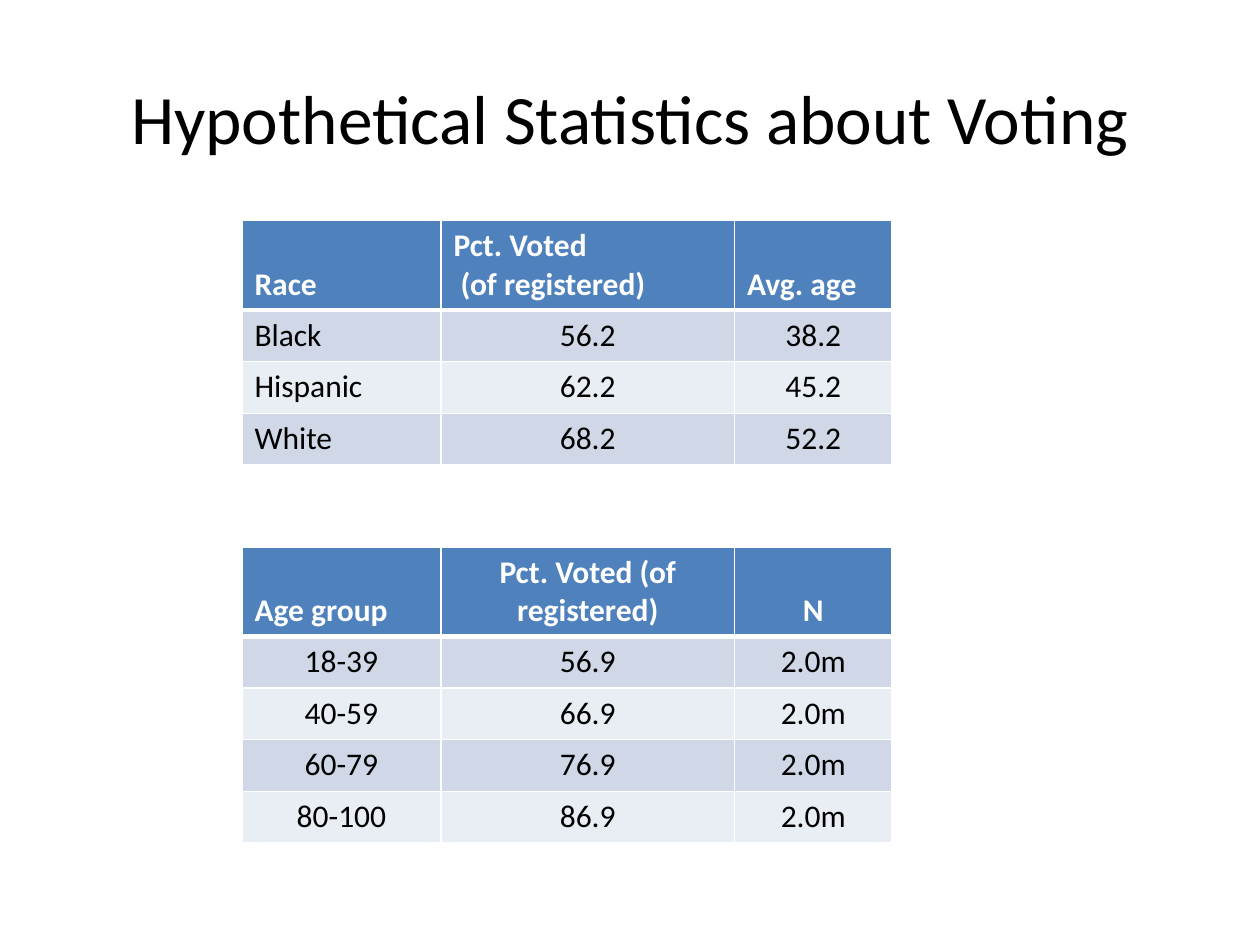
from dataclasses import dataclass

from lxml import etree
from pptx import Presentation
from pptx import util as u
from pptx.dml.color import RGBColor
from pptx.enum import text
from pptx.oxml import ns


@dataclass(frozen=True)
class Theme:
    font: str = "Calibri"
    title_size: float = 39.6
    table_size: float = 18
    ink: str = "000000"
    header_ink: str = "FFFFFF"
    header_fill: str = "4F81BD"
    band_fills: tuple = ("D0D8E8", "E9EDF4")
    rule: str = "FFFFFF"
    thin_rule: float = 1
    thick_rule: float = 3


LEFT = text.PP_ALIGN.LEFT
CENTER = text.PP_ALIGN.CENTER
TABLE_LEFT = 1.92
COLUMN_WIDTHS = (1.58, 2.33, 1.25)
HEADER_HEIGHT = 0.7
ROW_HEIGHT = 0.41

RACE_ROWS = (
    ("Race", "Pct. Voted\n (of registered)", "Avg. age"),
    ("Black", "56.2", "38.2"),
    ("Hispanic", "62.2", "45.2"),
    ("White", "68.2", "52.2"),
)
AGE_ROWS = (
    ("Age group", "Pct. Voted (of registered)", "N"),
    ("18-39", "56.9", "2.0m"),
    ("40-59", "66.9", "2.0m"),
    ("60-79", "76.9", "2.0m"),
    ("80-100", "86.9", "2.0m"),
)


def write_text(frame, content, *, font, size, color, bold=False, align=LEFT):
    """Fill a text frame, one paragraph for each line of content."""
    frame.text = content
    for paragraph in frame.paragraphs:
        paragraph.alignment = align
        for run in paragraph.runs:
            run.font.name = font
            run.font.size = u.Pt(size)
            run.font.bold = bold
            run.font.color.rgb = RGBColor.from_string(color)


def set_border(cell, side, color, width):
    """Draw one side of a cell: L, R, T or B, called in that order before the fill."""
    line = etree.SubElement(
        cell._tc.get_or_add_tcPr(), ns.qn(f"a:ln{side}"), w=str(u.Pt(width))
    )
    fill = etree.SubElement(line, ns.qn("a:solidFill"))
    etree.SubElement(fill, ns.qn("a:srgbClr"), val=color)


class SlideBuilder:
    def __init__(self, slide, theme):
        self.slide = slide
        self.theme = theme

    def title(self, content, left, top, width, height):
        shape = self.slide.shapes.title
        shape.left, shape.top = u.Inches(left), u.Inches(top)
        shape.width, shape.height = u.Inches(width), u.Inches(height)
        shape.text_frame.vertical_anchor = text.MSO_ANCHOR.MIDDLE
        write_text(shape.text_frame, content, font=self.theme.font,
                   size=self.theme.title_size, color=self.theme.ink, align=CENTER)

    def table(self, rows, top, header_aligns, body_aligns):
        height = HEADER_HEIGHT + ROW_HEIGHT * (len(rows) - 1)
        table = self.slide.shapes.add_table(
            len(rows), len(COLUMN_WIDTHS), u.Inches(TABLE_LEFT), u.Inches(top),
            u.Inches(sum(COLUMN_WIDTHS)), u.Inches(height)).table
        for column, width in zip(table.columns, COLUMN_WIDTHS):
            column.width = u.Inches(width)
        for index, values in enumerate(rows):
            is_header = index == 0
            table.rows[index].height = u.Inches(HEADER_HEIGHT if is_header else ROW_HEIGHT)
            aligns = header_aligns if is_header else body_aligns
            for column, (value, align) in enumerate(zip(values, aligns)):
                self.cell(table.cell(index, column), value, index, align)

    def cell(self, cell, value, row, align):
        theme = self.theme
        is_header = row == 0
        widths = {side: theme.thin_rule for side in "LRTB"}
        if is_header:
            widths["B"] = theme.thick_rule
        elif row == 1:
            widths["T"] = theme.thick_rule
        for side, width in widths.items():
            set_border(cell, side, theme.rule, width)
        fill = theme.header_fill if is_header else theme.band_fills[(row - 1) % 2]
        cell.fill.solid()
        cell.fill.fore_color.rgb = RGBColor.from_string(fill)
        cell.vertical_anchor = text.MSO_ANCHOR.BOTTOM if is_header else text.MSO_ANCHOR.TOP
        write_text(cell.text_frame, value, font=theme.font, size=theme.table_size,
                   color=theme.header_ink if is_header else theme.ink,
                   bold=is_header, align=align)


def main():
    presentation = Presentation()
    presentation.slide_width = u.Inches(10)
    presentation.slide_height = u.Inches(7.5)
    title_only = presentation.slide_layouts.get_by_name("Title Only")
    builder = SlideBuilder(presentation.slides.add_slide(title_only), Theme())

    builder.title("Hypothetical Statistics about Voting", 0.5, 0.3, 9, 1.25)
    builder.table(RACE_ROWS, 1.75, (LEFT, LEFT, LEFT), (LEFT, CENTER, CENTER))
    builder.table(AGE_ROWS, 4.34, (LEFT, CENTER, CENTER), (CENTER, CENTER, CENTER))
    presentation.save("out.pptx")


if __name__ == "__main__":
    main()
